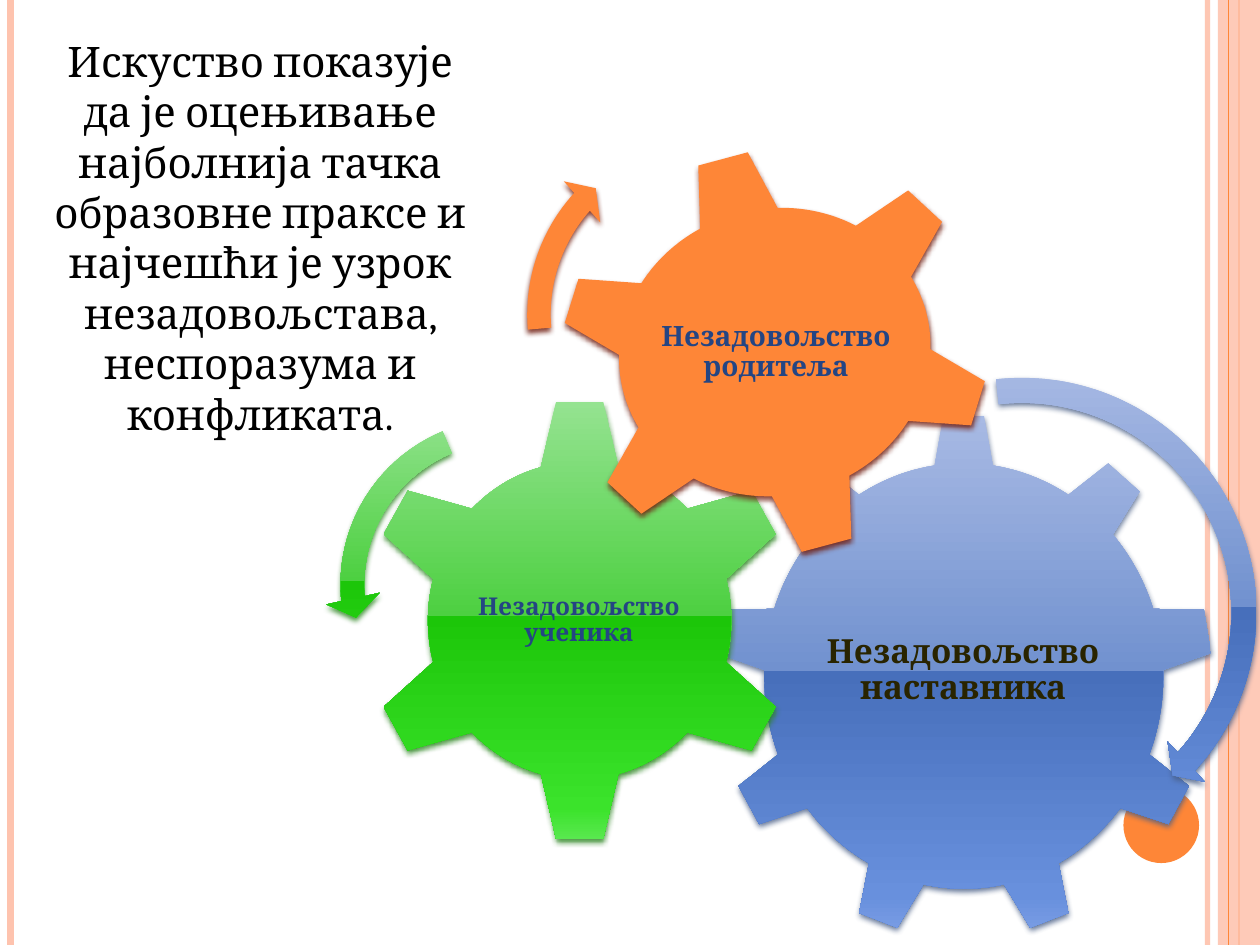
from dataclasses import dataclass

from lxml.etree import SubElement as Sub
from pptx import Presentation
from pptx.dml.color import RGBColor as Rgb
from pptx.enum.shapes import MSO_CONNECTOR as Conn, MSO_SHAPE as Kind
from pptx.enum.text import MSO_ANCHOR as Anchor, MSO_AUTO_SIZE as Fit, PP_ALIGN as Align
from pptx.oxml.ns import qn
from pptx.util import Pt


@dataclass(frozen=True)
class Theme:
    font: str = "Cambria"
    black: str = "000000"
    dark: str = "292400"
    navy: str = "244583"
    peach: str = "FEC3AE"
    orange: str = "FE8637"
    blues: tuple = ("A8BAE4", "7191CF", "476FBB", "6890DD", "7EA0E6")
    greens: tuple = ("96E392", "4DD041", "1CC609", "3BE32B", "5EE955")
    stops: tuple = (0, 49, 49, 92, 100)
    shade: tuple = ("485E86", "2B8520", "6F1B0E")  # blue, green, orange
    body: int = 24
    large: int = 19
    medium: int = 16
    small: int = 14


T = Theme()


def apply(obj, vals):
    for key, val in vals.items():
        setattr(obj, key, val)


def place(shape, box):
    apply(shape, dict(zip(("left", "top", "width", "height"), map(Pt, box))))


def fade(part, alpha):
    """Make the colour inside a part partly transparent."""
    color = next(part.iter(qn("a:srgbClr")))
    Sub(color, qn("a:alpha"), val=str(alpha * 1000))


def paint(shape, fill):
    """Fill with one colour, or with a downward gradient from a tuple."""
    if isinstance(fill, str):
        shape.fill.solid()
        shape.fill.fore_color.rgb = Rgb.from_string(fill)
        return
    shape.fill.gradient()
    shape.fill.gradient_angle = 270
    stops = next(shape._element.spPr.iter(qn("a:gsLst")))
    for old in list(stops):
        stops.remove(old)
    for pos, color in zip(T.stops, fill):
        stop = Sub(stops, qn("a:gs"), pos=str(pos * 1000))
        Sub(stop, qn("a:srgbClr"), val=color)


def form(slide, kind, box, fill, shade=None, adjs=(), turn=0):
    shape = slide.shapes.add_shape(kind, *map(Pt, box))
    shape.rotation = turn
    for i, adj in enumerate(adjs):
        shape.adjustments[i] = adj
    paint(shape, fill)
    shape.line.fill.background()
    shape.shadow.inherit = False
    if shade:
        effects = shape._element.spPr.find(qn("a:effectLst"))
        cast = Sub(effects, qn("a:outerShdw"), blurRad=str(Pt(3.1)),
                   dist=str(Pt(2)), dir="5400000", rotWithShape="0")
        Sub(cast, qn("a:srgbClr"), val=shade)
        fade(cast, 83)
    return shape


def rule(slide, x, color, width, alpha=None):
    line = slide.shapes.add_connector(Conn.STRAIGHT, Pt(x), 0, Pt(x), Pt(540))
    apply(line.line, {"width": Pt(width)})
    line.line.color.rgb = Rgb.from_string(color)
    props = line._element.spPr
    if alpha:
        fade(props, alpha)
    Sub(props, qn("a:effectLst"))


def write(frame, text, size, color, bold, **style):
    para = frame.paragraphs[0]
    apply(para, {"alignment": Align.CENTER, **style})
    run = para.add_run()
    run.text = text
    apply(run.font, {"name": T.font, "size": Pt(size), "bold": bold})
    run.font.color.rgb = Rgb.from_string(color)
    return para


def label(slide, box, text, size, color, inset):
    frame = slide.shapes.add_textbox(*map(Pt, box)).text_frame
    sides = ("left", "top", "right", "bottom")
    apply(frame, {f"margin_{side}": Pt(inset) for side in sides})
    apply(frame, {"word_wrap": True, "vertical_anchor": Anchor.MIDDLE})
    write(frame, text, size, color, True,
          line_spacing=0.9, space_after=Pt(0.35 * size))


def intro(slide, text):
    body = slide.placeholders[1]
    place(body, (16.6, 16.6, 264.2, 398.2))
    apply(body.text_frame, {"word_wrap": True, "auto_size": Fit.NONE,
                            "vertical_anchor": Anchor.TOP})
    para = write(body.text_frame, text, T.body, T.black, False, space_before=Pt(6))
    props = para._p.get_or_add_pPr()
    props.set("marL", "0")
    props.set("indent", "0")
    Sub(props, qn("a:buNone"))


def frame(slide):
    """Draw the stripes at both edges and the dot."""
    rule(slide, 690, T.peach, 3, 93)
    rule(slide, 6, T.peach, 4.5)
    rule(slide, 708, T.orange, 1.5)
    band = form(slide, Kind.RECTANGLE, (696, 0, 24, 540), T.peach)
    fade(band._element.spPr, 87)
    rule(slide, 702, T.orange, 0.75)
    form(slide, Kind.OVAL, (642, 450, 43.2, 43.2), T.orange)


def gears(slide):
    blue, green, orange = zip((T.blues, T.greens, T.orange), T.shade)

    form(slide, Kind.GEAR_9, (408.2, 236.2, 285.1, 300.2), *blue)
    label(slide, (465.1, 305.3, 170.6, 156.2), "Незадовољство наставника",
          T.large, T.dark, 2)
    form(slide, Kind.GEAR_6, (207.4, 226.8, 247.7, 255.6), *green)
    label(slide, (269.3, 290.9, 123.1, 127.4), "Незадовољство ученика",
          T.small, T.navy, 1.5)
    form(slide, Kind.GEAR_6, (318.2, 84.2, 249.1, 234), *orange, turn=345)
    label(slide, (374.4, 134.6, 138.2, 133.2), "Незадовољство родитеља",
          T.medium, T.navy, 1.5)

    form(slide, Kind.CIRCULAR_ARROW, (441.4, 207.4, 285.1, 285.1), *blue,
         adjs=(0.05, 2.99, 25.35, 158.21, 0.055))
    form(slide, Kind.LEFT_CIRCULAR_ARROW, (185.8, 230.4, 207.4, 207.4), *green,
         adjs=(0.065, 4.3, 104.89, 148.38, 0.075))
    form(slide, Kind.CIRCULAR_ARROW, (292.3, 67.7, 223.9, 223.9), *orange,
         adjs=(0.06, 3.94, 133.14, 105.08, 0.07))


def main():
    deck = Presentation()
    apply(deck, {"slide_width": Pt(720), "slide_height": Pt(540)})
    slide = deck.slides.add_slide(deck.slide_layouts[1])
    title = slide.shapes.title._element
    title.getparent().remove(title)

    frame(slide)
    intro(slide, "Искуство показује да је оцењивање најболнија тачка "
                 "образовне праксе и најчешћи је узрок незадовољстава, "
                 "неспоразума и конфликата.")
    gears(slide)
    deck.save("out.pptx")


if __name__ == "__main__":
    main()
